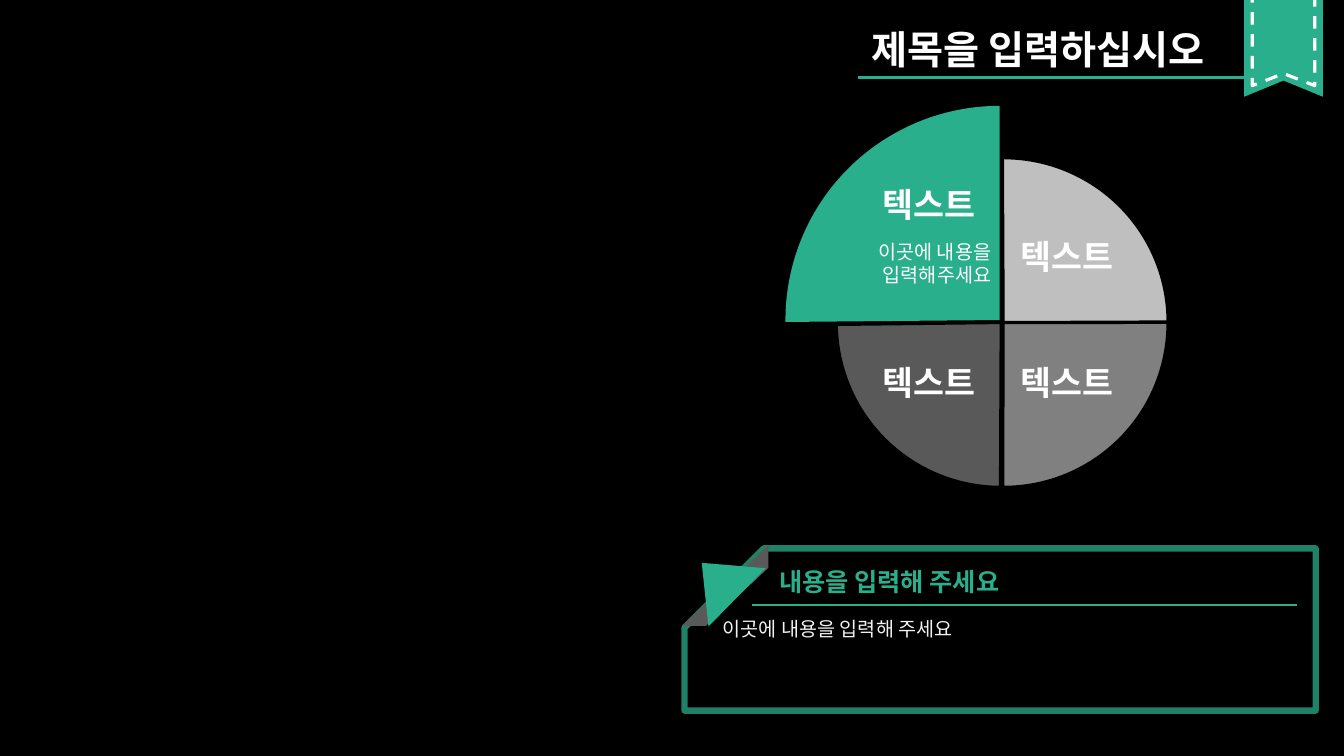
from pptx import Presentation
from pptx.dml.color import RGBColor
from pptx.enum.dml import MSO_LINE
from pptx.enum.shapes import MSO_CONNECTOR, MSO_SHAPE
from pptx.enum.text import MSO_AUTO_SIZE, PP_ALIGN as ALIGN
from pptx.oxml.ns import qn
from pptx.util import Inches, Pt
from lxml import etree

GREEN, WHITE, BLACK, DARK = "29AF8C", "FFFFFF", "000000", "595959"


def color(value):
    return RGBColor.from_string(value)


def paint(shape, fill=None, line=None, width=0):
    shape.shadow.inherit = False
    if fill:
        shape.fill.solid()
        shape.fill.fore_color.rgb = color(fill)
    else:
        shape.fill.background()
    if line:
        shape.line.color.rgb = color(line)
        shape.line.width = Pt(width)
    else:
        shape.line.fill.background()


presentation = Presentation()
presentation.slide_width = Inches(13.33)
presentation.slide_height = Inches(7.5)
slide = presentation.slides.add_slide(presentation.slide_layouts[6])
slide.background.fill.solid()
slide.background.fill.fore_color.rgb = color(BLACK)
shapes = slide.shapes

# Pie quarters: left, top, diameter, start and end in degrees, fill, outline
quarters = [
    (8.33, 1.58, 3.25, 359.96, 90.16, "808080", BLACK),
    (8.3, 1.58, 3.25, 90.25, 179.32, DARK, BLACK),
    (8.33, 1.57, 3.25, 269.73, 359.78, "BFBFBF", BLACK),
    (7.79, 1.05, 4.25, 179.48, 270, GREEN, None),
]
for left, top, size, start, end, fill, outline in quarters:
    quarter = shapes.add_shape(MSO_SHAPE.PIE, Inches(left), Inches(top), Inches(size), Inches(size))
    # An angle is stored in 60000ths of a degree, an adjustment in 100000ths
    quarter.adjustments[0] = start * 0.6
    quarter.adjustments[1] = end * 0.6
    paint(quarter, fill, outline, 1.5)

# Content frame with a folded corner
frame = shapes.add_shape(MSO_SHAPE.SNIP_1_RECTANGLE, Inches(6.79), Inches(5.44), Inches(6.26), Inches(1.61))
frame.adjustments[0] = 0.488
frame._element.spPr.find(qn("a:xfrm")).set("flipH", "1")
paint(frame, line="1E8168", width=4.5)

fold = shapes.add_shape(MSO_SHAPE.DIAGONAL_STRIPE, Inches(6.76), Inches(5.41), Inches(0.86), Inches(0.8))
fold.adjustments[0] = 0.72
fold.rotation = 180
paint(fold, DARK)

flap = shapes.add_shape(MSO_SHAPE.ISOSCELES_TRIANGLE, Inches(6.73), Inches(5.51), Inches(0.81), Inches(0.49))
flap.rotation = 314.4
paint(flap, GREEN)

# Rules under the headings
for left, right, y, width in [(7.46, 12.86, 6, 1.25), (8.51, 12.34, 0.77, 1.75)]:
    rule = shapes.add_connector(MSO_CONNECTOR.STRAIGHT, Inches(left), Inches(y), Inches(right), Inches(y))
    rule.line.color.rgb = color(GREEN)
    rule.line.width = Pt(width)
    etree.SubElement(rule._element.spPr, qn("a:effectLst"))

# Texts: wording, box, alignment, wrap, font
label_font = {"size": Pt(24), "bold": True, "color": WHITE}
texts = [
    ("텍스트", (left, top, 1.25, 0.5), ALIGN.CENTER, True, label_font)
    for left, top in [(9.96, 2.29), (9.96, 3.54), (8.59, 3.54), (8.59, 1.78)]
] + [
    ("이곳에 내용을 입력해주세요", (7.84, 2.33, 2.09, 0.57), ALIGN.RIGHT, True,
     {"size": Pt(14), "color": WHITE}),
    ("이곳에 내용을 입력해 주세요", (7.07, 6.07, 5.8, 0.34), ALIGN.LEFT, True,
     {"size": Pt(14), "color": "F2F2F2"}),
    ("내용을 입력해 주세요", (7.63, 5.57, 2.59, 0.4), ALIGN.LEFT, False,
     {"size": Pt(18), "bold": True, "color": GREEN}),
    ("제목을 입력하십시오", (8.55, 0.2, 3.83, 0.57), ALIGN.LEFT, False,
     {"size": Pt(28), "bold": True, "color": WHITE}),
]
for wording, box, alignment, wrap, font in texts:
    frame_text = shapes.add_textbox(*map(Inches, box)).text_frame
    frame_text.word_wrap = wrap
    frame_text.auto_size = MSO_AUTO_SIZE.SHAPE_TO_FIT_TEXT
    paragraph = frame_text.paragraphs[0]
    paragraph.alignment = alignment
    run = paragraph.add_run()
    run.text = wording
    run.font.name = "Calibri"
    for name, value in font.items():
        if name == "color":
            run.font.color.rgb = color(value)
        else:
            setattr(run.font, name, value)

# Ribbon and its dashed stitching: left, right, top, tails, notch, outline
center = 12.73
for left, right, top, tail, notch, outline in [
    (12.34, 13.12, -0.1, 0.96, 0.8, None),
    (12.42, 13.04, -0.09, 0.85, 0.73, WHITE),
]:
    builder = shapes.build_freeform(Inches(left), Inches(top))
    corners = [(right, top), (right, tail), (center, notch), (left, tail)]
    builder.add_line_segments([(Inches(x), Inches(y)) for x, y in corners], close=True)
    ribbon = builder.convert_to_shape()
    paint(ribbon, GREEN, outline, 2.25)
    if outline:
        ribbon.line.dash_style = MSO_LINE.DASH

presentation.save("out.pptx")
